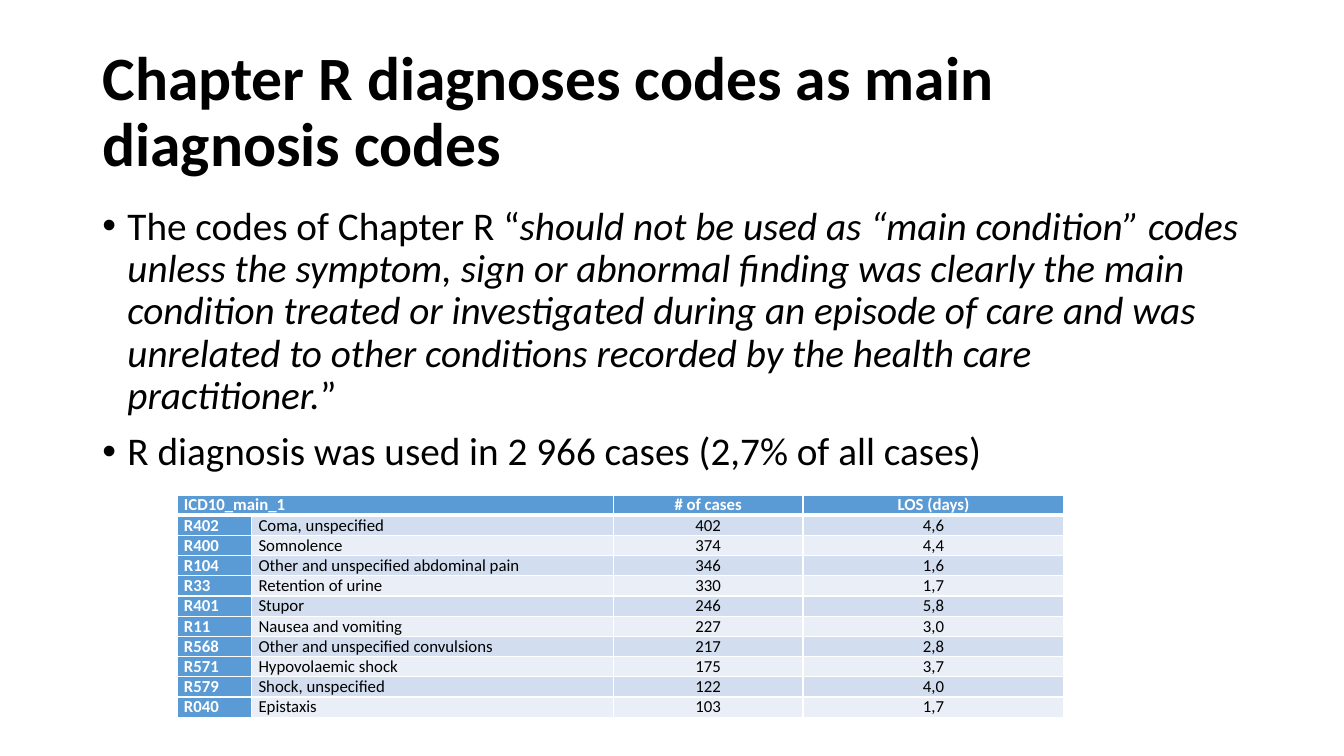
"""Build the slide on Chapter R codes used as main diagnosis codes."""
from dataclasses import dataclass

from lxml.etree import SubElement
from pptx import Presentation
from pptx.dml.color import RGBColor
from pptx.enum.text import MSO_ANCHOR, MSO_AUTO_SIZE, PP_ALIGN
from pptx.oxml.ns import qn
from pptx.util import Pt


@dataclass(frozen=True)
class Theme:
    font: str = "Calibri"
    ink: str = "000000"
    white: str = "FFFFFF"
    accent: str = "5B9BD5"
    bands: tuple = ("D2DEEF", "EAEFF7")
    title_size: int = 44
    body_size: int = 28
    table_size: int = 12


theme = Theme()


def add_run(paragraph, text, size, color=theme.ink, bold=False, italic=False):
    run = paragraph.add_run()
    run.text = text
    run.font.name = theme.font
    run.font.size = Pt(size)
    run.font.bold = bold
    run.font.italic = italic
    run.font.color.rgb = RGBColor.from_string(color)


def add_border(cell, side, width):
    line = SubElement(cell._tc.get_or_add_tcPr(), qn(f"a:{side}"), w=str(Pt(width)))
    SubElement(SubElement(line, qn("a:solidFill")), qn("a:srgbClr"), val=theme.white)


deck = Presentation()
deck.slide_width, deck.slide_height = Pt(960), Pt(540)
slide = deck.slides.add_slide(deck.slide_layouts[5])

title = slide.shapes.title
title.left, title.top, title.width, title.height = Pt(66), Pt(28.75), Pt(828), Pt(104.4)
title.text_frame.auto_size = MSO_AUTO_SIZE.NONE
title.text_frame.vertical_anchor = MSO_ANCHOR.MIDDLE
heading = title.text_frame.paragraphs[0]
heading.alignment = PP_ALIGN.LEFT
heading.line_spacing = 0.9
add_run(heading, "Chapter R diagnoses codes as main diagnosis codes", theme.title_size, bold=True)

points = [
    [
        ("The codes of Chapter R “", False),
        ("should not be used as “main condition” codes unless the symptom, sign or "
         "abnormal finding was clearly the main condition treated or investigated "
         "during an episode of care and was unrelated to other conditions recorded "
         "by the health care practitioner.", True),
        ("”", False),
    ],
    [("R diagnosis was used in 2 966 cases (2,7% of all cases)", False)],
]
body = slide.shapes.add_textbox(Pt(66), Pt(143.75), Pt(828), Pt(342.6)).text_frame
body.word_wrap = True
for index, point in enumerate(points):
    bullet = body.add_paragraph() if index else body.paragraphs[0]
    bullet.line_spacing = 0.9
    bullet.space_before = Pt(10)
    properties = bullet._p.get_or_add_pPr()
    properties.set("marL", str(Pt(18)))
    properties.set("indent", str(Pt(-18)))
    SubElement(properties, qn("a:buFont"), typeface="Arial")
    SubElement(properties, qn("a:buChar"), char="•")
    for text, italic in point:
        add_run(bullet, text, theme.body_size, italic=italic)

diagnoses = [
    ("ICD10_main_1", "", "# of cases", "LOS (days)"),
    ("R402", "Coma, unspecified", "402", "4,6"),
    ("R400", "Somnolence", "374", "4,4"),
    ("R104", "Other and unspecified abdominal pain", "346", "1,6"),
    ("R33", "Retention of urine", "330", "1,7"),
    ("R401", "Stupor", "246", "5,8"),
    ("R11", "Nausea and vomiting", "227", "3,0"),
    ("R568", "Other and unspecified convulsions", "217", "2,8"),
    ("R571", "Hypovolaemic shock", "175", "3,7"),
    ("R579", "Shock, unspecified", "122", "4,0"),
    ("R040", "Epistaxis", "103", "1,7"),
]
column_widths = (53.3, 258.5, 135.4, 186.5)
row_height = 14.4
cases = slide.shapes.add_table(
    len(diagnoses), len(column_widths), Pt(126.4), Pt(353.5),
    Pt(sum(column_widths)), Pt(row_height * len(diagnoses)),
).table
for column, width in zip(cases.columns, column_widths):
    column.width = Pt(width)

for row, diagnosis in enumerate(diagnoses):
    cases.rows[row].height = Pt(row_height)
    for column, text in enumerate(diagnosis):
        cell = cases.cell(row, column)
        is_header = row == 0 or column == 0
        cell.margin_left = cell.margin_right = Pt(5)
        cell.margin_top = cell.margin_bottom = Pt(0)
        for side in ("lnL", "lnR", "lnT", "lnB"):
            under_header = (row, side) in ((0, "lnB"), (1, "lnT"))
            add_border(cell, side, 3 if under_header else 1)
        cell.fill.solid()
        fill = theme.accent if is_header else theme.bands[(row - 1) % 2]
        cell.fill.fore_color.rgb = RGBColor.from_string(fill)
        entry = cell.text_frame.paragraphs[0]
        entry.alignment = PP_ALIGN.CENTER if column > 1 else PP_ALIGN.LEFT
        if text:
            color = theme.white if is_header else theme.ink
            add_run(entry, text, theme.table_size, color, bold=is_header)
cases.cell(0, 0).merge(cases.cell(0, 1))

deck.save("out.pptx")
